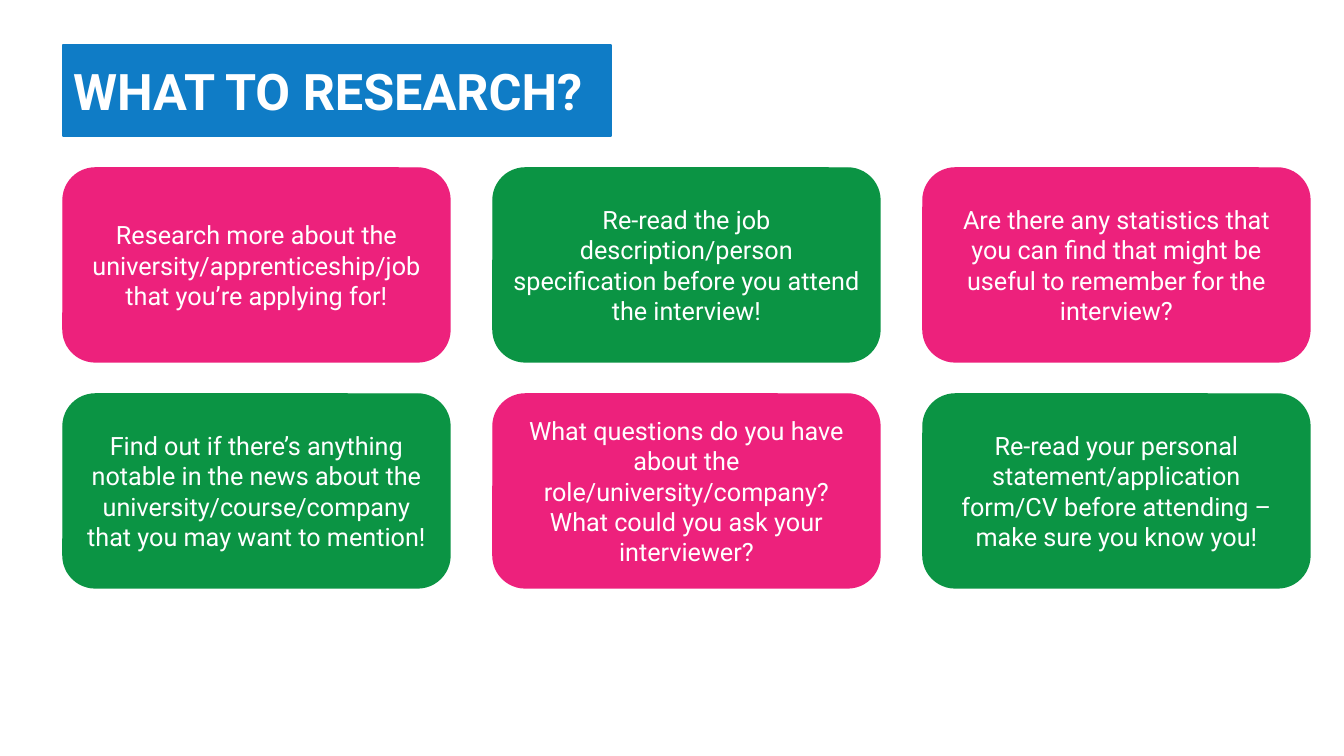
from pptx import Presentation
from pptx import util as u
from pptx.dml.color import RGBColor
from pptx.enum import shapes, text
from dataclasses import dataclass

PX = 914400 / 100.8


@dataclass(frozen=True)
class Theme:
    font: str = "Roboto"
    blue: str = "0F7CC6"
    pink: str = "ED217C"
    green: str = "0B9444"
    white: str = "FFFFFF"
    title_size: int = 36
    card_size: int = 18


def px(*lengths):
    return [u.Emu(round(length * PX)) for length in lengths]


def write_block(box, words, color, size, bold=False, align=text.PP_ALIGN.CENTER):
    """Fill and outline a box in one colour and put white text in its middle."""
    box.fill.solid()
    box.fill.fore_color.rgb = RGBColor.from_string(color)
    box.line.color.rgb = RGBColor.from_string(color)
    box.line.width = u.Pt(1)
    frame = box.text_frame
    frame.word_wrap = True
    frame.auto_size = text.MSO_AUTO_SIZE.NONE
    frame.vertical_anchor = text.MSO_ANCHOR.MIDDLE
    para = frame.paragraphs[0]
    para.alignment = align
    span = para.add_run()
    span.text = words
    span.font.name = theme.font
    span.font.size = u.Pt(size)
    span.font.bold = bold
    span.font.color.rgb = RGBColor.from_string(theme.white)


theme = Theme()
deck = Presentation()
deck.slide_width, deck.slide_height = px(1344, 756)
page = deck.slides.add_slide(deck.slide_layouts.get_by_name("Title Only"))

title = page.shapes.title
title.left, title.top, title.width, title.height = px(63, 45, 548, 91)
write_block(title, "WHAT TO RESEARCH?", theme.blue, theme.title_size,
            bold=True, align=text.PP_ALIGN.LEFT)

tips = [
    ["Research more about the university/apprenticeship/job that you’re applying for!",
     "Re-read the job description/person specification before you attend the interview!",
     "Are there any statistics that you can find that might be useful to remember "
     "for the interview?"],
    ["Find out if there’s anything notable in the news about the "
     "university/course/company that you may want to mention!",
     "What questions do you have about the role/university/company? "
     "What could you ask your interviewer?",
     "Re-read your personal statement/application form/CV before attending – "
     "make sure you know you!"],
]
colors = [theme.pink, theme.green]

for row, row_tips in enumerate(tips):
    for column, tip in enumerate(row_tips):
        card = page.shapes.add_shape(
            shapes.MSO_SHAPE.ROUNDED_RECTANGLE,
            *px(63 + 430 * column, 168 + 226 * row, 387, 194))
        card.shadow.inherit = False
        write_block(card, tip, colors[(row + column) % 2], theme.card_size)

deck.save("out.pptx")
